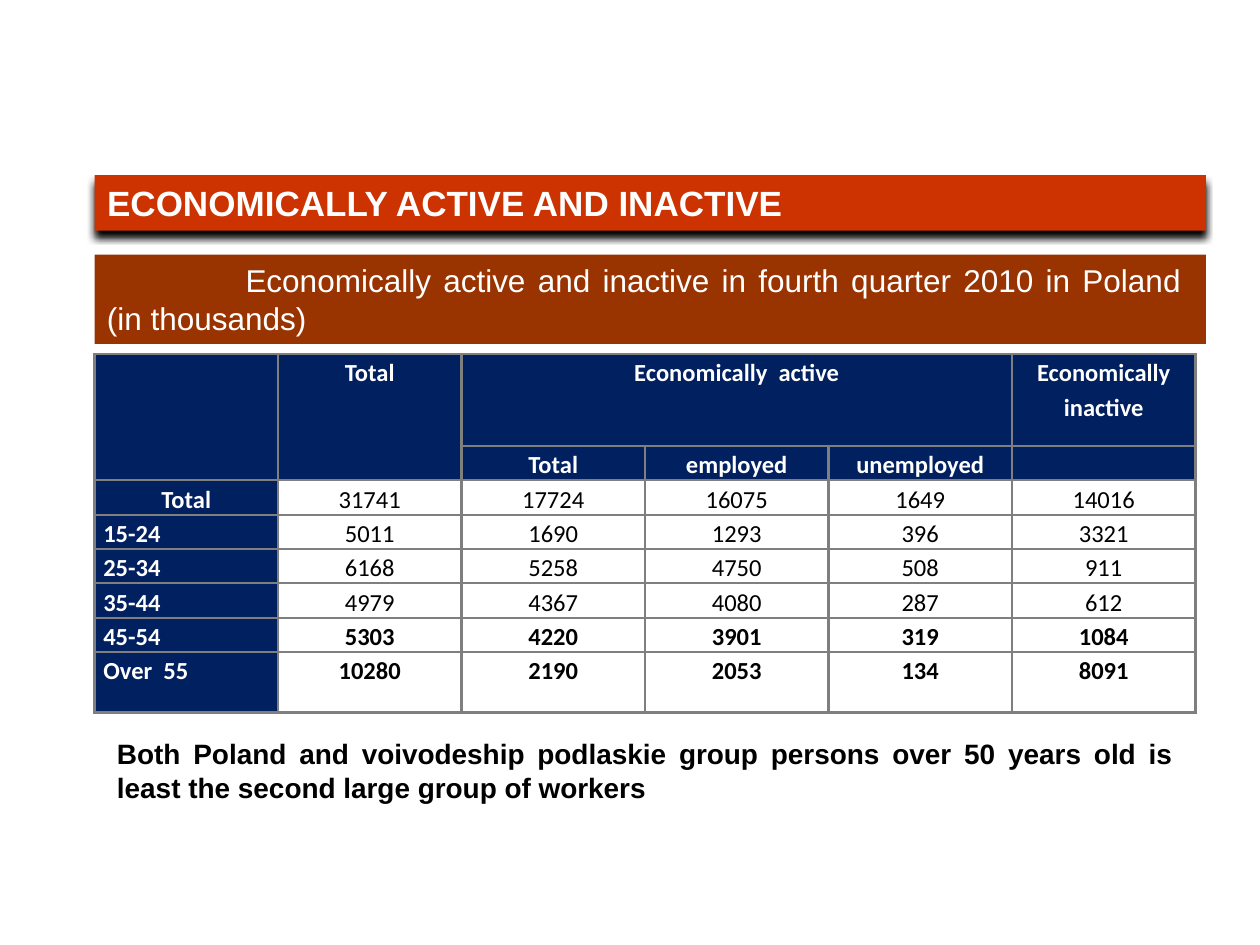
from lxml import etree
from pptx import Presentation
from pptx.dml.color import RGBColor
from pptx.enum.shapes import MSO_SHAPE
from pptx.enum.text import MSO_ANCHOR, MSO_AUTO_SIZE, PP_ALIGN as AL
from pptx.oxml import parse_xml
from pptx.oxml.ns import nsdecls, qn
from pptx.util import Inches, Pt

WIDTH, HEIGHT = 10, 7.5
NAVY, WHITE, BLACK, GREY = "002060", "FFFFFF", "000000", "7F7F7F"

HEADER = [
    ["", "Total", "Economically  active", "", "", "Economically inactive"],
    ["", "", "Total", "employed", "unemployed", ""],
]
DATA = [
    ["Total", 31741, 17724, 16075, 1649, 14016],
    ["15-24", 5011, 1690, 1293, 396, 3321],
    ["25-34", 6168, 5258, 4750, 508, 911],
    ["35-44", 4979, 4367, 4080, 287, 612],
    ["45-54", 5303, 4220, 3901, 319, 1084],
    ["Over  55", 10280, 2190, 2053, 134, 8091],
]
ROW_HEIGHTS = [0.73] + [0.27] * 6 + [0.48]
MERGES = [((0, 0), (1, 0)), ((0, 1), (1, 1)), ((0, 2), (0, 4))]
BOLD_ROWS = {"45-54", "Over  55"}


def rgb(color):
    return RGBColor.from_string(color)


class Deck:
    font, table_font = "Arial", "Calibri"

    def __init__(self):
        self.prs = Presentation()
        self.prs.slide_width = Inches(WIDTH)
        self.prs.slide_height = Inches(HEIGHT)

    def new_slide(self):
        self.s = self.prs.slides.add_slide(self.prs.slide_layouts[5])

    def box(self, x, y, w, h):
        """Turn shares of the slide's size into lengths."""
        pw, ph = self.prs.slide_width, self.prs.slide_height
        return int(x * pw), int(y * ph), int(w * pw), int(h * ph)

    def add_run(self, p, text, size, color, bold=False, font=None):
        r = p.add_run()
        r.text = text
        r.font.name, r.font.size = font or self.font, Pt(size)
        r.font.bold, r.font.color.rgb = bold, rgb(color)

    def add_text(self, sp, lines, size, color, bold=False):
        tf = sp.text_frame
        tf.word_wrap, tf.auto_size = True, MSO_AUTO_SIZE.NONE
        tf.vertical_anchor = MSO_ANCHOR.TOP
        p = tf.paragraphs[0]
        p.alignment = AL.JUSTIFY
        for i, line in enumerate(lines):
            if i:
                p.add_line_break()
            self.add_run(p, line, size, color, bold)
        return p

    def title(self, text, area, fill):
        sp = self.s.shapes.title
        sp.left, sp.top, sp.width, sp.height = self.box(*area)
        sp.fill.solid()
        sp.fill.fore_color.rgb = rgb(fill)
        sp._element.spPr.append(parse_xml(
            f'<a:effectLst {nsdecls("a")}><a:outerShdw blurRad="{Pt(4)}" '
            f'dist="{Pt(4)}" dir="5400000" rotWithShape="0">'
            f'<a:srgbClr val="{BLACK}"/></a:outerShdw></a:effectLst>'))
        self.add_text(sp, [text], 20, WHITE, True)

    def band(self, lines, area, fill, indent):
        sp = self.s.shapes.add_shape(MSO_SHAPE.RECTANGLE, *self.box(*area))
        sp.shadow.inherit = False
        sp.fill.solid()
        sp.fill.fore_color.rgb = rgb(fill)
        sp.line.fill.background()
        p = self.add_text(sp, lines, 18, WHITE)
        pPr = p._p.get_or_add_pPr()
        pPr.set("marL", "0")
        pPr.set("indent", str(Inches(indent)))

    def note(self, text, area):
        sp = self.s.shapes.add_textbox(*self.box(*area))
        self.add_text(sp, [text], 16, BLACK, True)

    def borders(self, cell):
        tcPr = cell._tc.get_or_add_tcPr()
        for side in "LRTB":
            tcPr.append(parse_xml(
                f'<a:ln{side} {nsdecls("a")} w="{Pt(1.5)}"><a:solidFill>'
                f'<a:srgbClr val="{GREY}"/></a:solidFill></a:ln{side}>'))

    def cell(self, cell, text, align, color, bold, fill):
        cell.margin_left = cell.margin_right = Inches(0.07)
        cell.margin_top = cell.margin_bottom = 0
        self.borders(cell)
        if fill:
            cell.fill.solid()
            cell.fill.fore_color.rgb = rgb(fill)
        else:
            cell.fill.background()
        p = cell.text_frame.paragraphs[0]
        p.alignment, p.line_spacing = align, 1.15
        if text:
            self.add_run(p, text, 14, color, bold, self.table_font)
        else:
            etree.SubElement(p._p, qn("a:endParaRPr"), sz="1400")

    def table(self, header, data, area):
        rows = header + data
        t = self.s.shapes.add_table(len(rows), len(rows[0]), *self.box(*area)).table
        for row, height in zip(t.rows, ROW_HEIGHTS):
            row.height = Inches(height)
        for i, row in enumerate(rows):
            for j, value in enumerate(row):
                heading = i < len(header) or j == 0
                age_group = j == 0 and i > len(header)
                self.cell(t.cell(i, j), str(value),
                          AL.JUSTIFY if age_group else AL.CENTER,
                          WHITE if heading else BLACK,
                          heading or row[0] in BOLD_ROWS,
                          NAVY if heading else None)
        for first, last in MERGES:
            t.cell(*first).merge(t.cell(*last))


def main():
    deck = Deck()
    deck.new_slide()
    left, width = 0.075, 0.882
    deck.title("ECONOMICALLY ACTIVE AND INACTIVE",
               (left, 1.39 / HEIGHT, width, 0.44 / HEIGHT), "CC3300")
    deck.band(["Economically active and inactive in fourth quarter 2010 in Poland ",
               "(in thousands)"],
              (left, 2.02 / HEIGHT, width, 0.71 / HEIGHT), "993300", 1.1)
    deck.table(HEADER, DATA,
               (left, 2.81 / HEIGHT, 0.874, sum(ROW_HEIGHTS) / HEIGHT))
    deck.note("Both Poland and voivodeship podlaskie group persons over 50 years "
              "old is least the second large group of workers",
              (0.083, 5.8 / HEIGHT, 0.858, 0.64 / HEIGHT))
    deck.prs.save("out.pptx")


if __name__ == "__main__":
    main()
